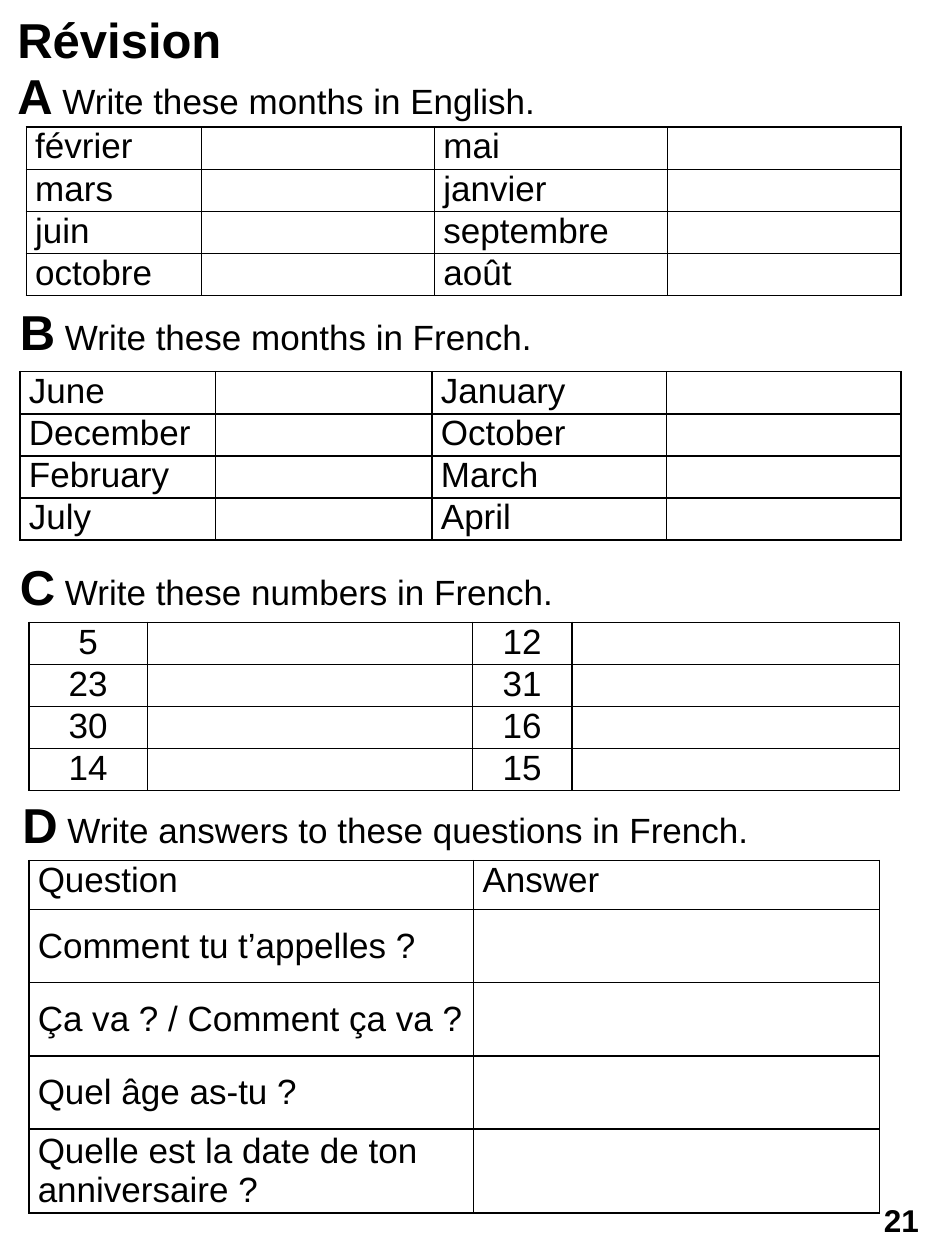
from lxml.etree import SubElement
from pptx import Presentation
from pptx.dml.color import RGBColor
from pptx.enum.shapes import MSO_SHAPE
from pptx.enum.text import MSO_ANCHOR, PP_ALIGN
from pptx.oxml.ns import qn
from pptx.util import Inches, Pt

FONT, INK = "Arial", "000000"
TITLE = "Révision"
PAGE = "21"
ROW = 0.33
MONTHS_FR = [("février", "", "mai", ""), ("mars", "", "janvier", ""),
             ("juin", "", "septembre", ""), ("octobre", "", "août", "")]
MONTHS_EN = [("June", "", "January", ""), ("December", "", "October", ""),
             ("February", "", "March", ""), ("July", "", "April", "")]
NUMBERS = [("5", "", "12", ""), ("23", "", "31", ""),
           ("30", "", "16", ""), ("14", "", "15", "")]
QUESTIONS = [("Question", "Answer"), ("Comment tu t’appelles ?", ""),
             ("Ça va ? / Comment ça va ?", ""), ("Quel âge as-tu ?", ""),
             ("Quelle est la date de ton anniversaire ?", "")]
EXERCISES = [
    dict(letter="A", task="Write these months in English.", head=(0.04, 0.47),
         at=(0.21, 1.01), cols=[1.39] + [1.85] * 3, heights=[ROW] * 4, rows=MONTHS_FR),
    dict(letter="B", task="Write these months in French.", head=(0.06, 2.34),
         at=(0.16, 2.95), cols=[1.55, 1.72, 1.86, 1.86], heights=[ROW] * 4, rows=MONTHS_EN),
    dict(letter="C", task="Write these numbers in French.", head=(0.06, 4.37),
         at=(0.23, 4.94), cols=[0.94, 2.58, 0.79, 2.6], heights=[ROW] * 4, rows=NUMBERS,
         align=PP_ALIGN.CENTER),
    dict(letter="D", task="Write answers to these questions in French.", head=(0.08, 6.26),
         at=(0.23, 6.83), cols=[3.53, 3.22], heights=[0.39] + [0.58] * 4, rows=QUESTIONS,
         body_anchor=MSO_ANCHOR.MIDDLE),
]


def add_run(p, text, size=20, bold=False, color=INK):
    """Append formatted text to a paragraph."""
    r = p.add_run()
    r.text = text
    r.font.name, r.font.size, r.font.bold = FONT, Pt(size), bold
    r.font.color.rgb = RGBColor.from_string(color)


def add_heading(slide, left, top, lead, rest="", width=7.42):
    """Add a line with a large bold lead and an optional plain rest."""
    tf = slide.shapes.add_textbox(*map(Inches, (left, top, width, 0.57))).text_frame
    tf.word_wrap = True
    p = tf.paragraphs[0]
    p.space_before = Pt(3)
    add_run(p, lead, size=28, bold=True)
    if rest:
        add_run(p, " " + rest)


def set_borders(cell, color=INK, width=1):
    """Draw all four edges of a cell."""
    tc_pr = cell._tc.get_or_add_tcPr()
    for i, edge in enumerate(("a:lnL", "a:lnR", "a:lnT", "a:lnB")):
        ln = tc_pr.makeelement(qn(edge), {"w": str(Pt(width))})
        SubElement(SubElement(ln, qn("a:solidFill")), qn("a:srgbClr"), val=color)
        tc_pr.insert(i, ln)


def add_grid(slide, at, cols, heights, rows, align=PP_ALIGN.LEFT, body_anchor=MSO_ANCHOR.TOP):
    """Add a bordered answer table."""
    size = sum(cols), sum(heights)
    table = slide.shapes.add_table(len(rows), len(cols), *map(Inches, at + size)).table
    table.first_row = table.horz_banding = False
    for col, width in zip(table.columns, cols):
        col.width = Inches(width)
    for i, (row, height, texts) in enumerate(zip(table.rows, heights, rows)):
        row.height = Inches(height)
        for cell, text in zip(row.cells, texts):
            cell.margin_left = cell.margin_right = Inches(0.07)
            cell.margin_top = cell.margin_bottom = 0
            cell.vertical_anchor = body_anchor if i else MSO_ANCHOR.TOP
            cell.fill.background()
            set_borders(cell)
            p = cell.text_frame.paragraphs[0]
            p.alignment = align
            if text:
                add_run(p, text)


def add_page_number(slide, text):
    """Add the page number in a clear rounded box."""
    sp = slide.shapes.add_shape(MSO_SHAPE.ROUNDED_RECTANGLE,
                                *map(Inches, (6.88, 9.45, 0.55, 0.47)))
    sp.shadow.inherit = False
    sp.fill.background()
    sp.line.fill.background()
    tf = sp.text_frame
    tf.vertical_anchor = MSO_ANCHOR.MIDDLE
    p = tf.paragraphs[0]
    p.alignment = PP_ALIGN.CENTER
    add_run(p, text, size=18, bold=True)


def main():
    """Build the revision sheet."""
    prs = Presentation()
    prs.slide_width, prs.slide_height = Inches(7.5), Inches(10)
    slide = prs.slides.add_slide(prs.slide_layouts[6])
    add_heading(slide, 0.04, 0.03, TITLE, width=8.66)
    for exercise in EXERCISES:
        grid = dict(exercise)
        add_heading(slide, *grid.pop("head"), grid.pop("letter"), grid.pop("task"))
        add_grid(slide, **grid)
    add_page_number(slide, PAGE)
    prs.save("out.pptx")


if __name__ == "__main__":
    main()
